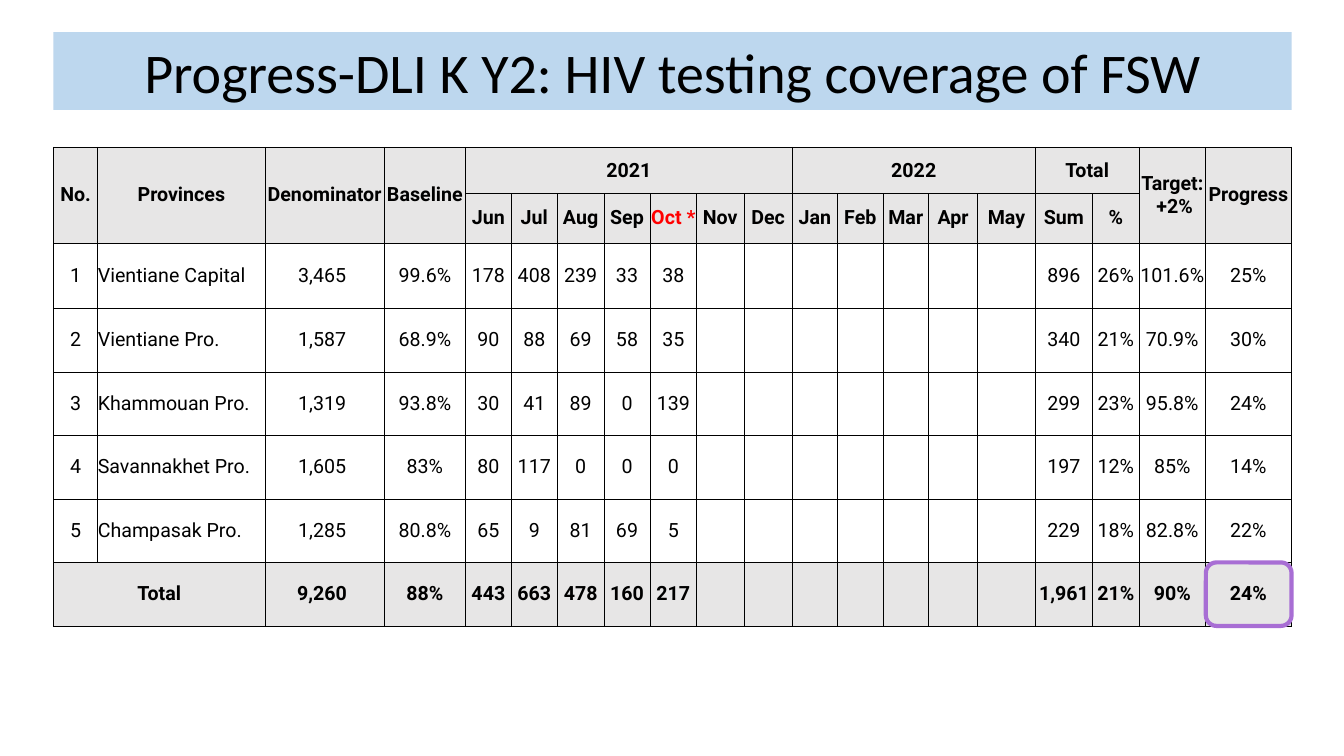
import dataclasses

import lxml.etree
import pptx
import pptx.dml.color
import pptx.enum.shapes
import pptx.enum.text
import pptx.oxml.ns
import pptx.util

Inches = pptx.util.Inches
Align = pptx.enum.text.PP_ALIGN
Shape = pptx.enum.shapes.MSO_SHAPE


@dataclasses.dataclass(frozen=True)
class Theme:
    title_font: str = "Calibri"
    table_font: str = "Roboto"
    title_size: int = 40
    table_size: int = 14
    border_width: float = 0.5
    highlight_width: float = 3
    text: str = "000000"
    alert: str = "FF0000"
    banner: str = "BDD7EE"
    shade: str = "E7E6E6"
    highlight: str = "A86ED4"


@dataclasses.dataclass(frozen=True)
class Box:
    left: float
    top: float
    width: float
    height: float

    def lengths(self):
        return [Inches(value) for value in dataclasses.astuple(self)]


THEME = Theme()

COLUMN_WIDTHS = [0.44, 1.66, 1.18, 0.81, 0.45, 0.46, 0.46, 0.46, 0.46, 0.47,
                 0.48, 0.45, 0.45, 0.45, 0.49, 0.57, 0.57, 0.46, 0.66, 0.85]
ROW_HEIGHTS = [0.46, 0.49, 0.65] + [0.63] * 5
PROVINCE_COLUMN = 1
PENDING = [""] * 7
GROUPS = (["No.", "Provinces", "Denominator", "Baseline", "2021"] + [""] * 6
          + ["2022"] + [""] * 4 + ["Total", "", "Target:\n +2%", "Progress"])
MONTHS = ([""] * 4 + ["Jun", "Jul", "Aug", "Sep", "Oct *", "Nov", "Dec",
                      "Jan", "Feb", "Mar", "Apr", "May", "Sum", "%"] + [""] * 2)
PROVINCES = [
    ["1", "Vientiane Capital", "3,465 ", "99.6%", "178", "408", "239", "33", "38",
     *PENDING, "896", "26%", "101.6%", "25%"],
    ["2", "Vientiane Pro.", "1,587 ", "68.9%", "90", "88", "69", "58", "35",
     *PENDING, "340", "21%", "70.9%", "30%"],
    ["3", "Khammouan Pro.", "1,319 ", "93.8%", "30", "41", "89", "0", "139",
     *PENDING, "299", "23%", "95.8%", "24%"],
    ["4", "Savannakhet Pro.", "1,605 ", "83%", "80", "117", "0", "0", "0",
     *PENDING, "197", "12%", "85%", "14%"],
    ["5", "Champasak Pro.", "1,285 ", "80.8%", "65", "9", "81", "69", "5",
     *PENDING, "229", "18%", "82.8%", "22%"],
]
TOTALS = ["Total", "", "9,260 ", "88%", "443", "663", "478", "160", "217",
          *PENDING, "1,961", "21%", "90%", "24%"]
ROWS = [GROUPS, MONTHS, *PROVINCES, TOTALS]
SHADED_ROWS = {0, 1, len(ROWS) - 1}
MERGES = [((0, column), (1, column)) for column in (0, 1, 2, 3, 18, 19)] + [
    ((0, 4), (0, 10)), ((0, 11), (0, 15)), ((0, 16), (0, 17)), ((7, 0), (7, 1))]


def rgb(value):
    return pptx.dml.color.RGBColor.from_string(value)


def write(frame, text, font, size, color, bold=False, align=Align.CENTER):
    para = frame.paragraphs[0]
    para.alignment = align
    for index, line in enumerate(text.split("\n")):
        if index:
            para.add_line_break()
        span = para.add_run()
        span.text = line
        span.font.name = font
        span.font.size = pptx.util.Pt(size)
        span.font.bold = bold
        span.font.color.rgb = rgb(color)


def add_borders(cell):
    qn = pptx.oxml.ns.qn
    properties = cell._tc.get_or_add_tcPr()
    for index, side in enumerate(("lnL", "lnR", "lnT", "lnB")):
        line = lxml.etree.Element(qn("a:" + side))
        line.set("w", str(pptx.util.Pt(THEME.border_width)))
        fill = lxml.etree.SubElement(line, qn("a:solidFill"))
        lxml.etree.SubElement(fill, qn("a:srgbClr")).set("val", THEME.text)
        properties.insert(index, line)


def add_banner(slide, box, title):
    banner = slide.shapes.add_shape(Shape.RECTANGLE, *box.lengths())
    banner.shadow.inherit = False
    banner.fill.solid()
    banner.fill.fore_color.rgb = rgb(THEME.banner)
    banner.line.fill.background()
    frame = banner.text_frame
    frame.word_wrap = True
    frame.vertical_anchor = pptx.enum.text.MSO_ANCHOR.MIDDLE
    write(frame, title, THEME.title_font, THEME.title_size, THEME.text)


def format_cell(cell, text, row, column):
    shaded = row in SHADED_ROWS
    if shaded:
        cell.fill.solid()
        cell.fill.fore_color.rgb = rgb(THEME.shade)
    else:
        cell.fill.background()
    add_borders(cell)
    cell.margin_left = cell.margin_right = cell.margin_top = cell.margin_bottom = 0
    cell.vertical_anchor = pptx.enum.text.MSO_ANCHOR.MIDDLE
    if text:
        color = THEME.alert if text.endswith("*") else THEME.text
        name_cell = column == PROVINCE_COLUMN and not shaded
        align = Align.JUSTIFY if name_cell else Align.CENTER
        write(cell.text_frame, text, THEME.table_font, THEME.table_size,
              color, shaded, align)


def add_coverage_table(slide, box):
    table = slide.shapes.add_table(len(ROWS), len(COLUMN_WIDTHS), *box.lengths()).table
    table.first_row = False
    table.horz_banding = False
    for column, width in zip(table.columns, COLUMN_WIDTHS):
        column.width = Inches(width)
    for row, height in zip(table.rows, ROW_HEIGHTS):
        row.height = Inches(height)
    for row, texts in enumerate(ROWS):
        for column, text in enumerate(texts):
            format_cell(table.cell(row, column), text, row, column)
    for first, last in MERGES:
        table.cell(*first).merge(table.cell(*last))


def add_highlight(slide, box):
    width, height = COLUMN_WIDTHS[-1], ROW_HEIGHTS[-1]
    target = Box(box.left + box.width - width, box.top + box.height - height,
                 width, height)
    frame = slide.shapes.add_shape(Shape.ROUNDED_RECTANGLE, *target.lengths())
    frame.shadow.inherit = False
    frame.fill.background()
    frame.line.color.rgb = rgb(THEME.highlight)
    frame.line.width = pptx.util.Pt(THEME.highlight_width)


def main():
    deck = pptx.Presentation()
    deck.slide_width = Inches(13.33)
    deck.slide_height = Inches(7.5)
    slide = deck.slides.add_slide(deck.slide_layouts[6])
    add_banner(slide, Box(0.53, 0.32, 12.28, 0.77),
               "Progress-DLI K Y2: HIV testing coverage of FSW")
    table_box = Box(0.53, 1.46, sum(COLUMN_WIDTHS), sum(ROW_HEIGHTS))
    add_coverage_table(slide, table_box)
    add_highlight(slide, table_box)
    deck.save("out.pptx")


if __name__ == "__main__":
    main()
